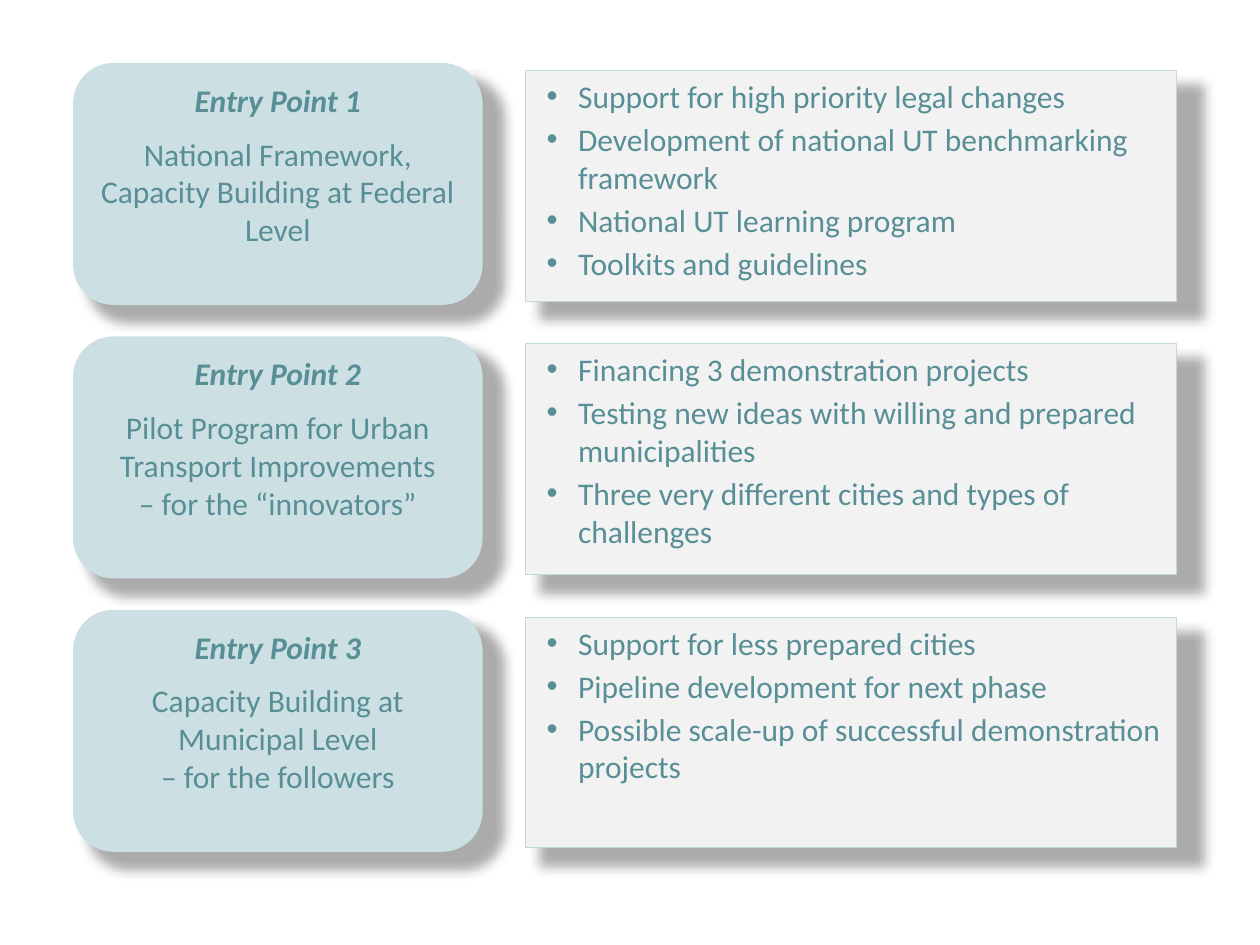
"""Build a slide of three entry points, each beside a panel of its activities."""
from dataclasses import dataclass

from lxml import etree
from pptx import Presentation
from pptx import util as u
from pptx.dml.color import RGBColor
from pptx.enum import shapes, text
from pptx.oxml.ns import qn

COLOURS = {
    "card": "CCDFE2",
    "panel": "F2F2F2",
    "panel_line": "C2D8DC",
    "text": "588F96",
    "shadow": "000000",
}
FONT_NAME = "Calibri"
FONT_SIZE = u.Pt(18)
ROW_PITCH = u.Inches(2.17)


@dataclass(frozen=True)
class Box:
    """Preset shape and place of the first box in a column."""

    preset: shapes.MSO_SHAPE
    left: u.Length
    top: u.Length
    width: u.Length
    height: u.Length
    fill: str


@dataclass(frozen=True)
class EntryPoint:
    """Wording of one row."""

    title: str
    summary: list[str]
    activities: list[str]


CARD = Box(shapes.MSO_SHAPE.ROUNDED_RECTANGLE, u.Inches(0.58), u.Inches(0.5),
           u.Inches(3.25), u.Inches(1.92), "card")
PANEL = Box(shapes.MSO_SHAPE.RECTANGLE, u.Inches(4.17), u.Inches(0.56),
            u.Inches(5.17), u.Inches(1.83), "panel")

ENTRY_POINTS = [
    EntryPoint(
        "Entry Point 1",
        ["National Framework, Capacity Building at Federal Level"],
        ["Support for high priority legal changes",
         "Development of national UT benchmarking framework",
         "National UT learning program",
         "Toolkits and guidelines"],
    ),
    EntryPoint(
        "Entry Point 2",
        ["Pilot Program for Urban Transport Improvements",
         "– for the “innovators”"],
        ["Financing 3 demonstration projects",
         "Testing new ideas with willing and prepared municipalities",
         "Three very different cities and types of challenges"],
    ),
    EntryPoint(
        "Entry Point 3",
        ["Capacity Building at Municipal Level", "– for the followers"],
        ["Support for less prepared cities",
         "Pipeline development for next phase",
         "Possible scale-up of successful demonstration projects"],
    ),
]


def colour(name: str) -> RGBColor:
    """Look up a palette colour."""
    return RGBColor.from_string(COLOURS[name])


def add_shadow(shape) -> None:
    """Give a shape a soft shadow towards the lower right."""
    shape.shadow.inherit = False
    effects = shape._element.spPr.find(qn("a:effectLst"))
    shadow = etree.SubElement(
        effects, qn("a:outerShdw"), blurRad=str(u.Pt(7)), dist=str(u.Pt(11)),
        dir="2700000", sx="102000", sy="102000", algn="tl", rotWithShape="0")
    shade = etree.SubElement(shadow, qn("a:srgbClr"), val=COLOURS["shadow"])
    etree.SubElement(shade, qn("a:alpha"), val="33000")


def add_box(slide, box: Box, row: int):
    """Draw a column's box in the given row."""
    shape = slide.shapes.add_shape(
        box.preset, box.left, box.top + row * ROW_PITCH, box.width, box.height)
    shape.fill.solid()
    shape.fill.fore_color.rgb = colour(box.fill)
    shape.line.fill.background()
    add_shadow(shape)
    shape.text_frame.word_wrap = True
    shape.text_frame.vertical_anchor = text.MSO_ANCHOR.TOP
    return shape


def style_paragraph(paragraph, alignment: text.PP_ALIGN, space_after: float = 0,
                    emphasis: bool = False) -> None:
    """Set a paragraph's alignment, spacing and font."""
    paragraph.alignment = alignment
    paragraph.space_after = u.Pt(space_after)
    font = paragraph.font
    font.name, font.size = FONT_NAME, FONT_SIZE
    font.bold = font.italic = emphasis
    font.color.rgb = colour("text")


def add_bullet(paragraph) -> None:
    """Give a paragraph a round bullet with a hanging indent."""
    properties = paragraph._p.get_or_add_pPr()
    properties.set("marL", str(u.Inches(0.32)))
    properties.set("indent", str(u.Inches(-0.25)))
    etree.SubElement(properties, qn("a:buFont"), typeface="Arial")
    etree.SubElement(properties, qn("a:buChar"), char="•")


def add_card(slide, entry: EntryPoint, row: int) -> None:
    """Draw the rounded card that names an entry point."""
    frame = add_box(slide, CARD, row).text_frame
    frame.text = "\n".join([entry.title, *entry.summary])
    title, *summary = frame.paragraphs
    style_paragraph(title, text.PP_ALIGN.CENTER, space_after=9, emphasis=True)
    for paragraph in summary:
        style_paragraph(paragraph, text.PP_ALIGN.CENTER)


def add_panel(slide, entry: EntryPoint, row: int) -> None:
    """Draw the outlined panel that lists an entry point's activities."""
    shape = add_box(slide, PANEL, row)
    shape.line.color.rgb = colour("panel_line")
    shape.line.width = u.Pt(0.5)
    shape.text_frame.text = "\n".join(entry.activities)
    for paragraph in shape.text_frame.paragraphs:
        add_bullet(paragraph)
        style_paragraph(paragraph, text.PP_ALIGN.LEFT, space_after=3)


def main() -> None:
    """Build and save the presentation."""
    presentation = Presentation()
    presentation.slide_width = u.Inches(10)
    presentation.slide_height = u.Inches(7.5)
    slide = presentation.slides.add_slide(presentation.slide_layouts[6])
    for add_column in (add_card, add_panel):
        for row, entry in enumerate(ENTRY_POINTS):
            add_column(slide, entry, row)
    presentation.save("out.pptx")


if __name__ == "__main__":
    main()
